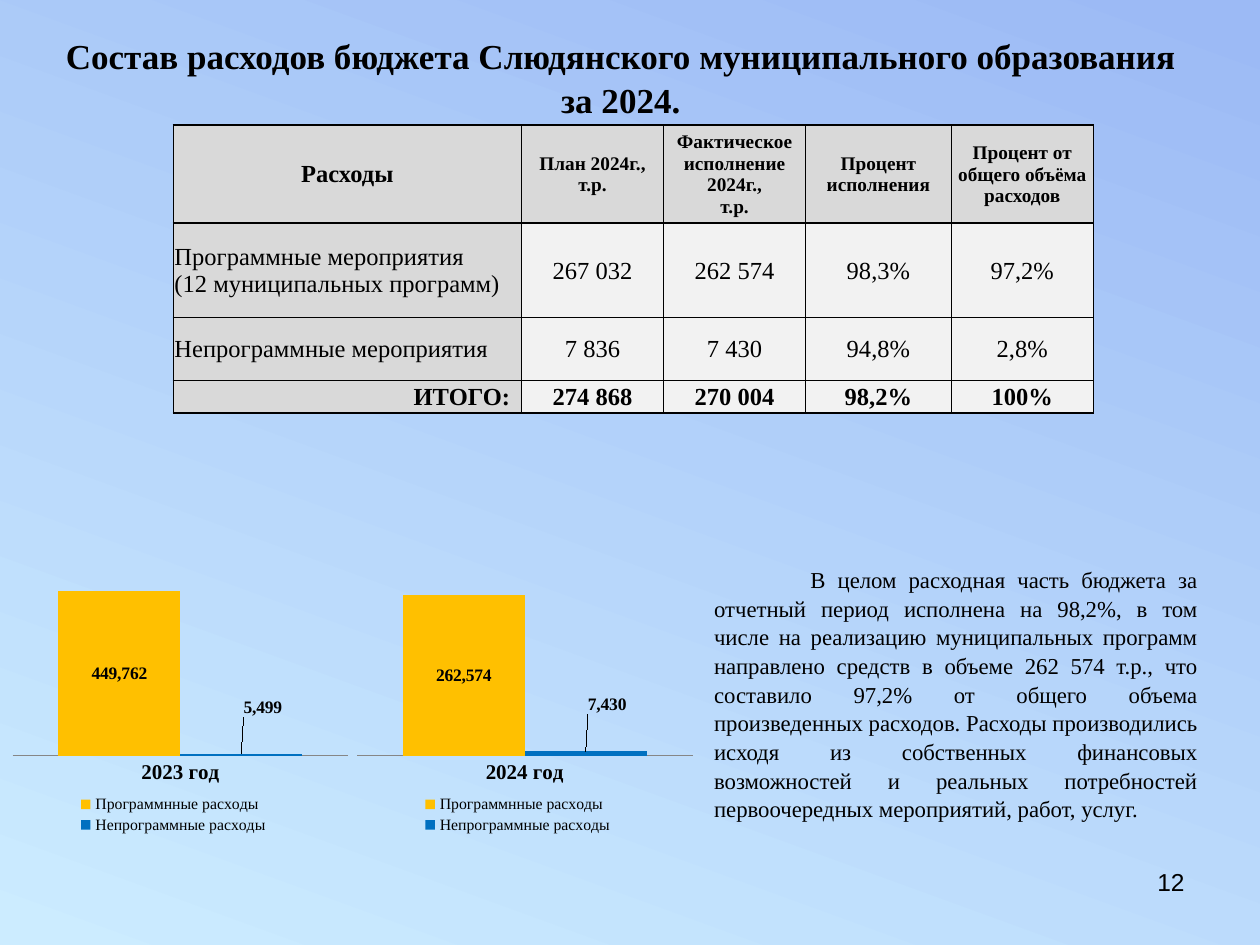
import pptx
import pptx.chart.data
import pptx.dml.color
import pptx.enum.chart
import pptx.enum.text
import pptx.oxml
import pptx.oxml.ns
import pptx.util

Pt = pptx.util.Pt
RGBColor = pptx.dml.color.RGBColor
ALIGN = pptx.enum.text.PP_ALIGN
ANCHOR = pptx.enum.text.MSO_ANCHOR

BLACK = RGBColor(0x00, 0x00, 0x00)
GREY = RGBColor(0xD9, 0xD9, 0xD9)
LIGHT_GREY = RGBColor(0xF2, 0xF2, 0xF2)
AXIS_GREY = RGBColor(0x86, 0x86, 0x86)
GOLD = RGBColor(0xFF, 0xC0, 0x00)
BLUE = RGBColor(0x00, 0x70, 0xC0)
SKY = RGBColor(0xCC, 0xEC, 0xFF)
PERIWINKLE = RGBColor(0x9C, 0xBA, 0xF5)

SERIF = "Times New Roman"


def set_font(font, size, bold=False, name=SERIF):
    font.name = name
    font.size = Pt(size)
    font.bold = bold
    font.color.rgb = BLACK


def write(frame, text, size, bold=False, name=SERIF, align=ALIGN.LEFT,
          spacing=None, indent=0):
    """Fill a text frame; a newline starts a paragraph, a vertical tab a line."""
    frame.word_wrap = True
    for index, line in enumerate(text.split("\n")):
        paragraph = frame.paragraphs[0] if index == 0 else frame.add_paragraph()
        paragraph.text = line
        paragraph.alignment = align
        paragraph.line_spacing = spacing
        if indent:
            paragraph._p.get_or_add_pPr().set("indent", str(Pt(indent)))
        set_font(paragraph.font, size, bold, name)
        for run in paragraph.runs:
            set_font(run.font, size, bold, name)


def manual_layout(x, y, width=None, height=None, inner=False):
    """Chart layout element; with no size, x and y are an offset."""
    parts = []
    if inner:
        parts.append(("layoutTarget", "inner"))
    if width:
        parts += [("xMode", "edge"), ("yMode", "edge")]
    parts += [("x", x), ("y", y)]
    if width:
        parts += [("w", width), ("h", height)]
    body = "".join(f'<c:{tag} val="{value}"/>' for tag, value in parts)
    return pptx.oxml.parse_xml(
        f'<c:layout {pptx.oxml.ns.nsdecls("c")}>'
        f"<c:manualLayout>{body}</c:manualLayout></c:layout>")


def replace_layout(element, layout, position):
    for old in element.findall(pptx.oxml.ns.qn("c:layout")):
        element.remove(old)
    element.insert(position, layout)


class BudgetSlide:
    def __init__(self, presentation):
        self.slide = presentation.slides.add_slide(presentation.slide_layouts[6])

    def background(self, start, end, angle):
        fill = self.slide.background.fill
        fill.gradient()
        fill.gradient_angle = angle
        for stop, color, position in zip(fill.gradient_stops, (start, end), (0, 0.99)):
            stop.color.rgb = color
            stop.position = position

    def text(self, text, left, top, width, height, anchor=ANCHOR.TOP, **style):
        shape = self.slide.shapes.add_textbox(Pt(left), Pt(top), Pt(width), Pt(height))
        shape.text_frame.vertical_anchor = anchor
        write(shape.text_frame, text, **style)

    def table(self, rows, left, top, widths, heights):
        shape = self.slide.shapes.add_table(
            len(rows), len(widths), Pt(left), Pt(top), Pt(sum(widths)), Pt(sum(heights)))
        table = shape.table
        for column, width in zip(table.columns, widths):
            column.width = Pt(width)
        for row, height in zip(table.rows, heights):
            row.height = Pt(height)
        last = len(rows) - 1
        for i, values in enumerate(rows):
            for j, value in enumerate(values):
                align = ALIGN.CENTER
                if j == 0 and i > 0:
                    align = ALIGN.RIGHT if i == last else ALIGN.LEFT
                self.cell(table.cell(i, j), value, align,
                          fill=GREY if i == 0 or j == 0 else LIGHT_GREY,
                          size=11 if i == 0 and j > 0 else 14,
                          bold=i in (0, last))

    def cell(self, cell, text, align, fill, size, bold):
        cell.margin_left = cell.margin_top = Pt(0.7)
        cell.margin_right = Pt(6.5 if align == ALIGN.RIGHT else 0.7)
        cell.margin_bottom = 0
        cell.vertical_anchor = ANCHOR.MIDDLE
        properties = cell._tc.get_or_add_tcPr()
        for side in "LRTB":
            properties.append(pptx.oxml.parse_xml(
                f'<a:ln{side} {pptx.oxml.ns.nsdecls("a")} w="{Pt(1)}"><a:solidFill>'
                f'<a:srgbClr val="{BLACK}"/></a:solidFill></a:ln{side}>'))
        cell.fill.solid()
        cell.fill.fore_color.rgb = fill
        write(cell.text_frame, text, size=size, bold=bold, align=align)

    def column_chart(self, year, program, other, maximum, left, top, width, height):
        data = pptx.chart.data.CategoryChartData(number_format="#,##0")
        data.categories = [year]
        data.add_series("Программнные расходы", [program])
        data.add_series("Непрограммные расходы", [other])
        chart = self.slide.shapes.add_chart(
            pptx.enum.chart.XL_CHART_TYPE.COLUMN_CLUSTERED,
            Pt(left), Pt(top), Pt(width), Pt(height), data).chart
        set_font(chart.font, 9)
        chart.has_title = False

        chart.has_legend = True
        chart.legend.position = pptx.enum.chart.XL_LEGEND_POSITION.BOTTOM
        chart.legend.include_in_layout = False
        set_font(chart.legend.font, 9)
        replace_layout(chart.legend._element, manual_layout(0.2, 0.84, 0.6, 0.15), 1)
        replace_layout(chart._chartSpace.chart.plotArea,
                       manual_layout(0.05, 0.07, 0.94, 0.64, inner=True), 0)

        chart.value_axis.visible = False
        chart.value_axis.has_major_gridlines = False
        chart.value_axis.minimum_scale = 0
        chart.value_axis.maximum_scale = maximum
        axis = chart.category_axis
        axis.major_tick_mark = pptx.enum.chart.XL_TICK_MARK.NONE
        axis.format.line.color.rgb = AXIS_GREY
        set_font(axis.tick_labels.font, 12, bold=True)

        plot = chart.plots[0]
        plot.gap_width = 75
        plot.overlap = 0
        plot.vary_by_categories = False
        positions = pptx.enum.chart.XL_LABEL_POSITION
        for series, color, position in zip(
                plot.series, (GOLD, BLUE), (positions.CENTER, positions.OUTSIDE_END)):
            series.format.fill.solid()
            series.format.fill.fore_color.rgb = color
            labels = series.data_labels
            labels.show_value = True
            labels.number_format = "#,##0"
            labels.number_format_is_linked = False
            labels.position = position
            set_font(labels.font, 10, bold=True)
        # The short column's label stands clear of the bar, up and to the right.
        label = plot.series[1].points[0].data_label
        label.position = positions.OUTSIDE_END
        set_font(label.font, 10, bold=True)
        replace_layout(label._dLbl, manual_layout(0.06, -0.11), 1)


def main():
    presentation = pptx.Presentation()
    presentation.slide_width = Pt(720)
    presentation.slide_height = Pt(540)
    page = BudgetSlide(presentation)
    page.background(SKY, PERIWINKLE, angle=70)
    page.text("Состав расходов бюджета Слюдянского муниципального образования\vза 2024.",
              20, 15, 669.5, 57, anchor=ANCHOR.MIDDLE,
              size=20, bold=True, align=ALIGN.CENTER, spacing=1.05)
    page.text("12", 516, 492, 168, 37, size=14, name="Arial", align=ALIGN.RIGHT)
    page.table(
        [["Расходы", "План 2024г.,\nт.р.", "Фактическое исполнение 2024г.,\nт.р.",
          "Процент исполнения", "Процент от общего объёма расходов"],
         ["Программные мероприятия\n(12 муниципальных программ)",
          "267 032", "262 574", "98,3%", "97,2%"],
         ["Непрограммные мероприятия", "7 836", "7 430", "94,8%", "2,8%"],
         ["ИТОГО:", "274 868", "270 004", "98,2%", "100%"]],
        99, 71.3, widths=[199, 81.2, 81.2, 83.2, 81.2], heights=[56.2, 54, 36, 18.5])
    page.text("В целом расходная часть бюджета за отчетный период исполнена на 98,2%, "
              "в том числе на реализацию муниципальных программ направлено средств "
              "в объеме 262 574 т.р., что составило 97,2% от общего объема произведенных "
              "расходов. Расходы производились исходя из собственных финансовых "
              "возможностей и реальных потребностей первоочередных мероприятий, "
              "работ, услуг.",
              401, 319, 290, 165, size=13, align=ALIGN.JUSTIFY, spacing=1.05, indent=55)
    charts = [("2023 год", 449762, 5499, 500000), ("2024 год", 262574, 7430, 300000)]
    for index, values in enumerate(charts):
        page.column_chart(*values, left=-3 + 196.8 * index, top=315.5,
                          width=204, height=164)
    presentation.save("out.pptx")


if __name__ == "__main__":
    main()
